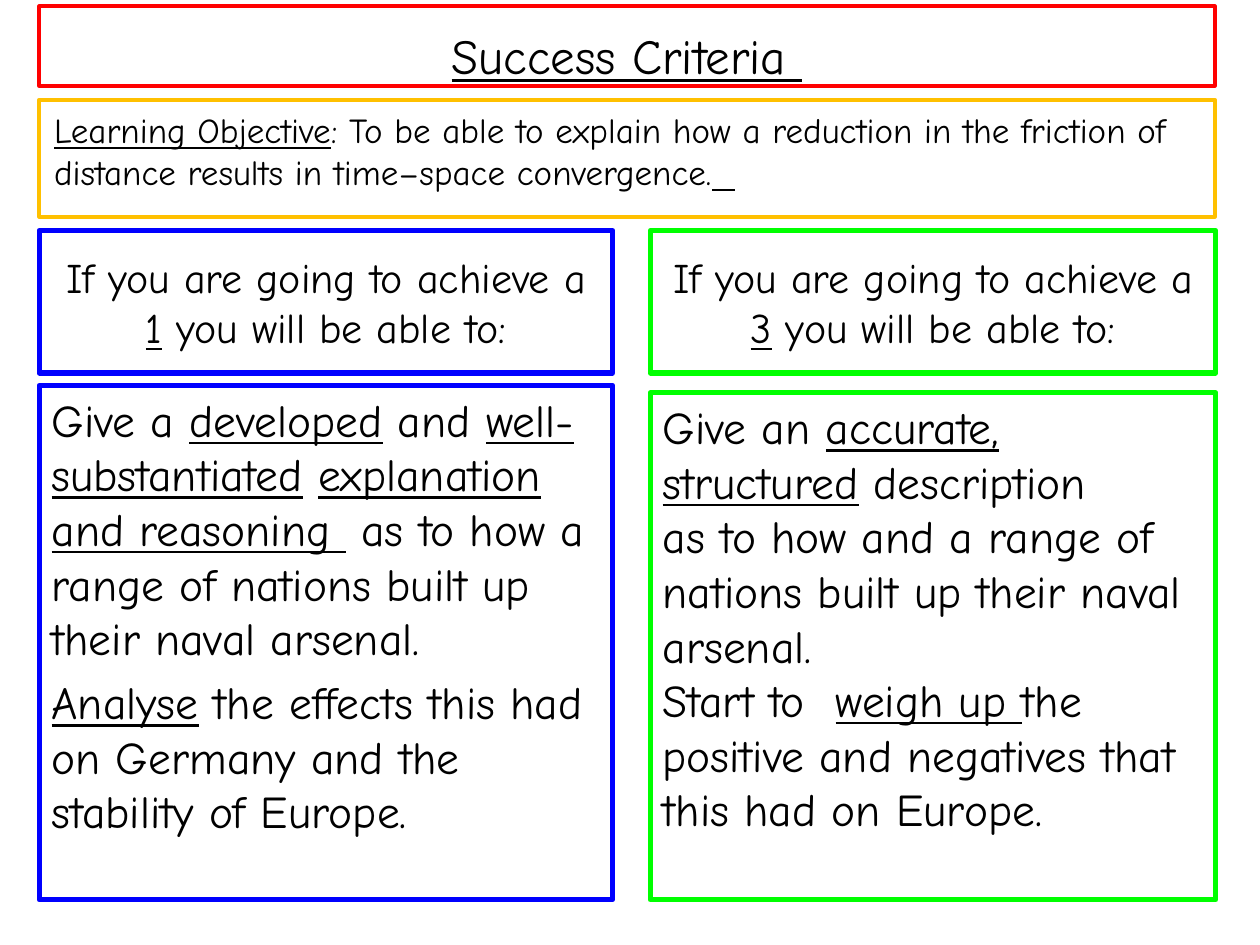
from pptx import Presentation
from pptx.dml.color import RGBColor
from pptx.enum.shapes import MSO_SHAPE
from pptx.enum.text import MSO_ANCHOR, PP_ALIGN
from pptx.util import Cm, Pt

COLORS = {
    "text": "000000",
    "fill": "FFFFFF",
    "title": "FF0000",
    "objective": "FFC000",
    "grade_1": "0000FF",
    "grade_3": "00FF00",
}
LEFT, FULL_WIDTH = 0.79, 23.7
COLUMNS = [
    ("1", "grade_1", LEFT, 11.56, 7.77, 5.5, [
        "Give a _developed_ and _well-substantiated_ _explanation and reasoning _"
        " as to how a range of nations built up their naval arsenal.",
        "_Analyse_ the effects this had on Germany and the stability of Europe.",
    ]),
    ("3", "grade_3", 13.11, 11.4, 7.92, 0, [
        "Give an _accurate,_",
        "_structured_ description",
        "as to how and a range of nations built up their naval arsenal.",
        "Start to  _weigh up _the positive and negatives that this had on Europe.",
    ]),
]
BODY_BOTTOM = 18.14


class Slide:
    """Draws outlined text panels on one slide in a shared style."""

    font = "Comic Neue"

    def __init__(self, prs):
        self.s = prs.slides.add_slide(prs.slide_layouts[6])

    def panel(self, box, color, paragraphs, size, line=3, anchor=MSO_ANCHOR.TOP,
              align=PP_ALIGN.LEFT, inset=(0.25, 0.13), wrap=True, gap=0, spacing=None):
        """Add a rectangle whose text marks underlined parts with underscores."""
        sp = self.s.shapes.add_shape(MSO_SHAPE.RECTANGLE, *map(Cm, box))
        sp.shadow.inherit = False
        sp.fill.solid()
        sp.fill.fore_color.rgb = RGBColor.from_string(COLORS["fill"])
        sp.line.color.rgb = RGBColor.from_string(COLORS[color])
        sp.line.width = Pt(line)
        tf = sp.text_frame
        tf.word_wrap = wrap
        tf.vertical_anchor = anchor
        tf.margin_left = tf.margin_right = Cm(inset[0])
        tf.margin_top = tf.margin_bottom = Cm(inset[1])
        for i, text in enumerate(paragraphs):
            p = tf.add_paragraph() if i else tf.paragraphs[0]
            p.alignment = align
            p.line_spacing = spacing
            p.space_before = Pt(gap if i else 0)
            p.font.name = self.font
            p.font.size = Pt(size)
            p.font.color.rgb = RGBColor.from_string(COLORS["text"])
            self.runs(p, text)

    def runs(self, p, text):
        """Split text at underscores and underline every second part."""
        for i, part in enumerate(text.split("_")):
            if part:
                r = p.add_run()
                r.text = part
                r.font.underline = i % 2 == 1


def main():
    """Build the success criteria slide."""
    prs = Presentation()
    prs.slide_width, prs.slide_height = Cm(25.4), Cm(19.05)
    slide = Slide(prs)
    for grade, color, left, width, top, gap, criteria in COLUMNS:
        slide.panel((left, top, width, BODY_BOTTOM - top), color, criteria, 26, gap=gap)
        slide.panel((left, 4.65, width, 2.87), color,
                    [f"If you are going to achieve a _{grade}_ you will be able to:"],
                    24, anchor=MSO_ANCHOR.MIDDLE, align=PP_ALIGN.CENTER)
    slide.panel((LEFT, 2.01, FULL_WIDTH, 2.36), "objective",
                ["_Learning Objective_: To be able to explain how a reduction in the "
                 "friction of distance results in time–space convergence._  _"],
                20, line=2.25, inset=(0.3, 0.18))
    slide.panel((LEFT, 0.13, FULL_WIDTH, 1.6), "title", ["_Success Criteria _"], 28,
                line=2.25, align=PP_ALIGN.CENTER, inset=(0.3, 0.18), wrap=False,
                spacing=1.17)
    prs.save("out.pptx")


if __name__ == "__main__":
    main()
